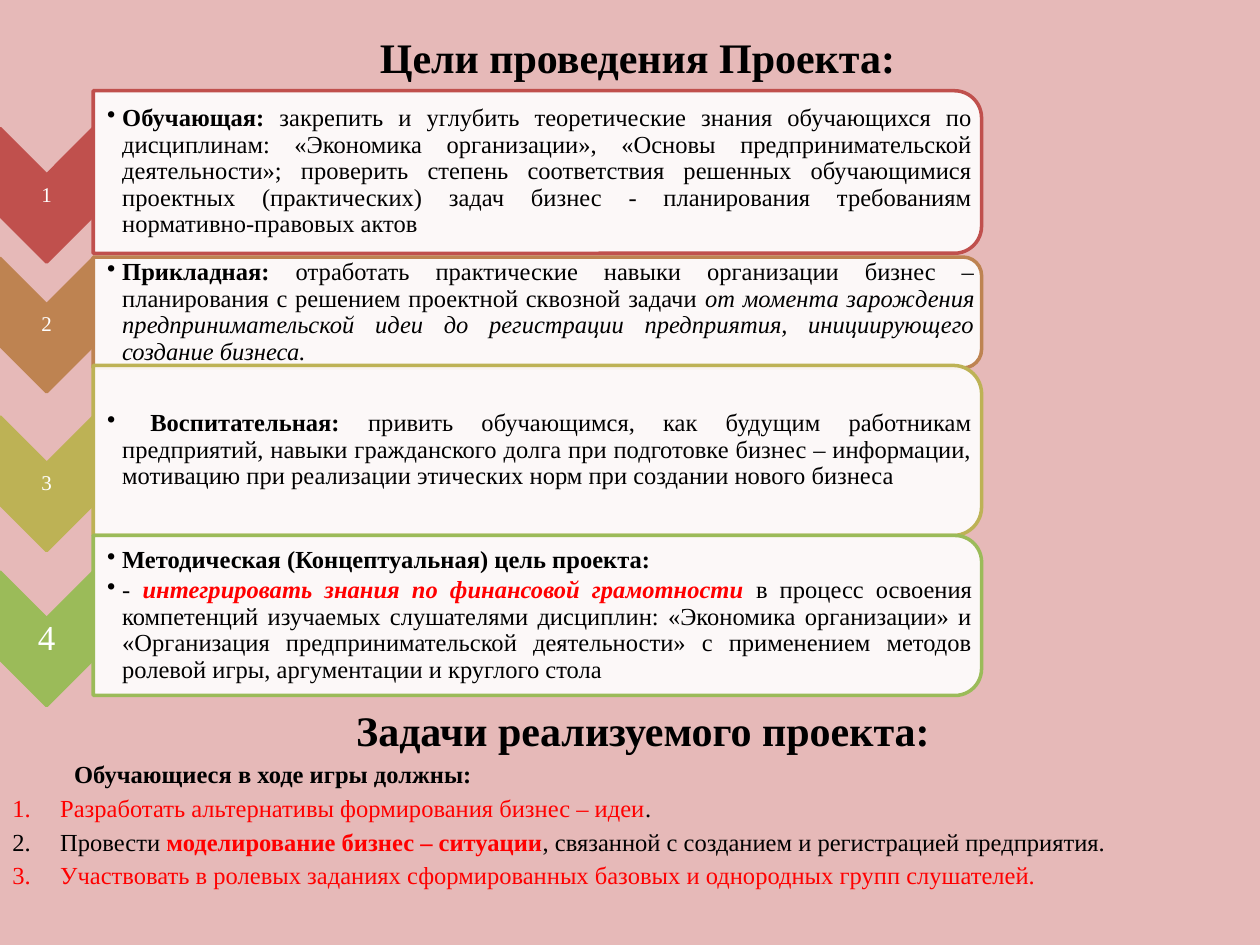
from dataclasses import dataclass

from lxml.etree import SubElement
from pptx import Presentation
from pptx.dml.color import RGBColor
from pptx.enum.shapes import MSO_SHAPE
from pptx.enum.text import MSO_ANCHOR, MSO_AUTO_SIZE, PP_ALIGN
from pptx.oxml.ns import qn
from pptx.util import Inches, Pt


@dataclass(frozen=True)
class Theme:
    font: str = "Times New Roman"
    background: str = "E6B9B8"
    panel: str = "FFFFFF"
    text: str = "000000"
    accent: str = "FF0000"
    number: str = "FFFFFF"
    heading_size: int = 24
    body_size: int = 14
    outline: int = 2


@dataclass(frozen=True)
class Box:
    """A place on the grid, in columns and rows."""
    left: float
    top: float
    width: float
    height: float


THEME = Theme()
COLUMNS, ROWS = 100, 75
CELL = Inches(10) // COLUMNS

# Run styles: bold, italic, accent colour
PLAIN, BOLD, ITALIC = (False, False, False), (True, False, False), (False, True, False)
RED, RED_BOLD, RED_STRONG = (False, False, True), (True, False, True), (True, True, True)

# Each goal: colour, number size, chevron top, panel top, panel height, paragraphs
GOALS = [
    ("C0504D", 12, 10.2, 7.2, 12.9, [
        (PP_ALIGN.JUSTIFY, [
            ("Обучающая:", BOLD),
            (" закрепить и углубить теоретические знания обучающихся по дисциплинам: "
             "«Экономика организации», «Основы предпринимательской деятельности»; проверить "
             "степень соответствия решенных обучающимися проектных (практических) задач "
             "бизнес - планирования требованиям нормативно-правовых актов", PLAIN)])]),
    ("BE8351", 12, 20.5, 20.4, 8.8, [
        (PP_ALIGN.JUSTIFY, [
            ("Прикладная:", BOLD),
            (" отработать практические навыки организации бизнес – планирования с решением "
             "проектной сквозной задачи ", PLAIN),
            ("от момента зарождения предпринимательской идеи до регистрации предприятия, "
             "инициирующего создание бизнеса.", ITALIC)])]),
    ("BDB255", 12, 33.1, 29, 13.5, [
        (PP_ALIGN.JUSTIFY, [
            (" Воспитательная:", BOLD),
            (" привить обучающимся, как будущим работникам предприятий, навыки гражданского "
             "долга при подготовке бизнес – информации, мотивацию при реализации этических "
             "норм при создании нового бизнеса", PLAIN)])]),
    ("9BBB59", 20, 45.4, 42.5, 12.7, [
        (PP_ALIGN.LEFT, [("Методическая (Концептуальная) цель проекта:", BOLD)]),
        (PP_ALIGN.JUSTIFY, [
            ("- ", PLAIN),
            ("интегрировать знания по финансовой грамотности ", RED_STRONG),
            ("в процесс освоения компетенций изучаемых слушателями дисциплин: «Экономика "
             "организации» и «Организация предпринимательской деятельности» с применением "
             "методов ролевой игры, аргументации и круглого стола", PLAIN)])]),
]

TASKS = [
    [("Разработать альтернативы формирования бизнес – идеи", RED), (".", PLAIN)],
    [("Провести ", PLAIN), ("моделирование бизнес – ситуации", RED_BOLD),
     (", связанной с созданием и регистрацией предприятия.", PLAIN)],
    [("Участвовать в ролевых заданиях сформированных базовых и однородных групп "
      "слушателей. ", RED)],
]


def place(box):
    return [round(value * CELL) for value in (box.left, box.top, box.width, box.height)]


def format_run(run, size, color, bold=False, italic=False):
    run.font.name = THEME.font
    run.font.size = Pt(size)
    run.font.bold = bold
    run.font.italic = italic
    run.font.color.rgb = RGBColor.from_string(color)


def add_runs(paragraph, runs, size):
    for text, (bold, italic, accent) in runs:
        run = paragraph.add_run()
        run.text = text
        format_run(run, size, THEME.accent if accent else THEME.text, bold, italic)


def set_indent(paragraph, left, first, bullet=None, **attributes):
    properties = paragraph._p.get_or_add_pPr()
    properties.set("marL", str(Inches(left)))
    properties.set("indent", str(Inches(first)))
    if bullet:
        SubElement(properties, qn(bullet), attributes)


def next_paragraph(frame, index):
    return frame.add_paragraph() if index else frame.paragraphs[0]


def add_text_frame(slide, box, left_inset=0.01):
    frame = slide.shapes.add_textbox(*place(box)).text_frame
    frame.word_wrap = True
    frame.vertical_anchor = MSO_ANCHOR.MIDDLE
    frame.margin_left = Inches(left_inset)
    frame.margin_top = frame.margin_right = frame.margin_bottom = Inches(0.01)
    return frame


def add_turned_shape(slide, kind, box, fill, line):
    """Add a shape turned by a quarter so that it covers the box."""
    shift = (box.width - box.height) / 2
    turned = Box(box.left + shift, box.top - shift, box.height, box.width)
    shape = slide.shapes.add_shape(kind, *place(turned))
    shape.rotation = 90
    shape.shadow.inherit = False
    shape.fill.solid()
    shape.fill.fore_color.rgb = RGBColor.from_string(fill)
    shape.line.color.rgb = RGBColor.from_string(line)
    shape.line.width = Pt(THEME.outline)
    return shape


def add_title(slide, box):
    title = slide.shapes.title
    title.left, title.top, title.width, title.height = place(box)
    frame = title.text_frame
    frame.text = "Цели проведения Проекта:"
    frame.auto_size = MSO_AUTO_SIZE.NONE
    frame.vertical_anchor = MSO_ANCHOR.MIDDLE
    frame.margin_bottom = Inches(0.42)
    paragraph = frame.paragraphs[0]
    paragraph.alignment = PP_ALIGN.CENTER
    paragraph.line_spacing = 1.15
    set_indent(paragraph, 0.5, 0.49)
    format_run(paragraph.runs[0], THEME.heading_size, THEME.text, bold=True)


def add_chevron(slide, box, number, size, color):
    add_turned_shape(slide, MSO_SHAPE.CHEVRON, box, color, color)
    label = Box(box.left, box.top + box.width / 2, box.width, box.height - box.width)
    frame = add_text_frame(slide, label)
    frame.text = str(number)
    paragraph = frame.paragraphs[0]
    paragraph.alignment = PP_ALIGN.CENTER
    paragraph.line_spacing = 0.9
    format_run(paragraph.runs[0], size, THEME.number)


def add_panel(slide, box, color, paragraphs):
    panel = add_turned_shape(slide, MSO_SHAPE.ROUND_2_SAME_RECTANGLE, box, THEME.panel, color)
    fill_color = panel._element.spPr.find(qn("a:solidFill"))[0]
    SubElement(fill_color, qn("a:alpha"), val="90000")
    # The text keeps clear of the rounded corners
    inset = 0.05 * box.height
    text_box = Box(box.left, box.top + inset, box.width - inset, box.height - 2 * inset)
    frame = add_text_frame(slide, text_box, left_inset=0.11)
    for index, (alignment, runs) in enumerate(paragraphs):
        paragraph = next_paragraph(frame, index)
        paragraph.alignment = alignment
        paragraph.line_spacing = 0.9
        paragraph.space_after = Pt(2)
        set_indent(paragraph, 0.12, -0.12, "a:buChar", char="•")
        add_runs(paragraph, runs, THEME.body_size)


def add_goals(slide, box, chevron_width=7.4, chevron_height=10.6):
    for number, (color, size, chevron_top, top, height, paragraphs) in enumerate(GOALS, 1):
        chevron = Box(box.left, chevron_top, chevron_width, chevron_height)
        add_chevron(slide, chevron, number, size, color)
        panel = Box(box.left + chevron_width, top, box.width - chevron_width, height)
        add_panel(slide, panel, color, paragraphs)


def add_tasks(slide, box):
    frame = slide.shapes.add_textbox(*place(box)).text_frame
    frame.word_wrap = True
    headings = [
        ("Задачи реализуемого проекта: ", THEME.heading_size, PP_ALIGN.CENTER),
        ("Обучающиеся в ходе игры должны:", THEME.body_size, PP_ALIGN.JUSTIFY),
    ]
    lines = [([(text, BOLD)], size, alignment) for text, size, alignment in headings]
    lines += [(runs, THEME.body_size, PP_ALIGN.JUSTIFY) for runs in TASKS]
    for index, (runs, size, alignment) in enumerate(lines):
        paragraph = next_paragraph(frame, index)
        paragraph.alignment = alignment
        paragraph.line_spacing = 1.15
        if index < len(headings):
            set_indent(paragraph, 0, 0.49)
        else:
            set_indent(paragraph, 0.38, -0.38, "a:buAutoNum", type="arabicPeriod")
        add_runs(paragraph, runs, size)


def main():
    presentation = Presentation()
    presentation.slide_width, presentation.slide_height = COLUMNS * CELL, ROWS * CELL
    slide = presentation.slides.add_slide(presentation.slide_layouts[5])
    slide.background.fill.solid()
    slide.background.fill.fore_color.rgb = RGBColor.from_string(THEME.background)
    add_title(slide, Box(-6.7, -0.2, 104.7, 12.5))
    add_goals(slide, Box(0, 7.2, 77.9, 48))
    add_tasks(slide, Box(0, 54.8, 98, 16.5))
    presentation.save("out.pptx")


if __name__ == "__main__":
    main()
